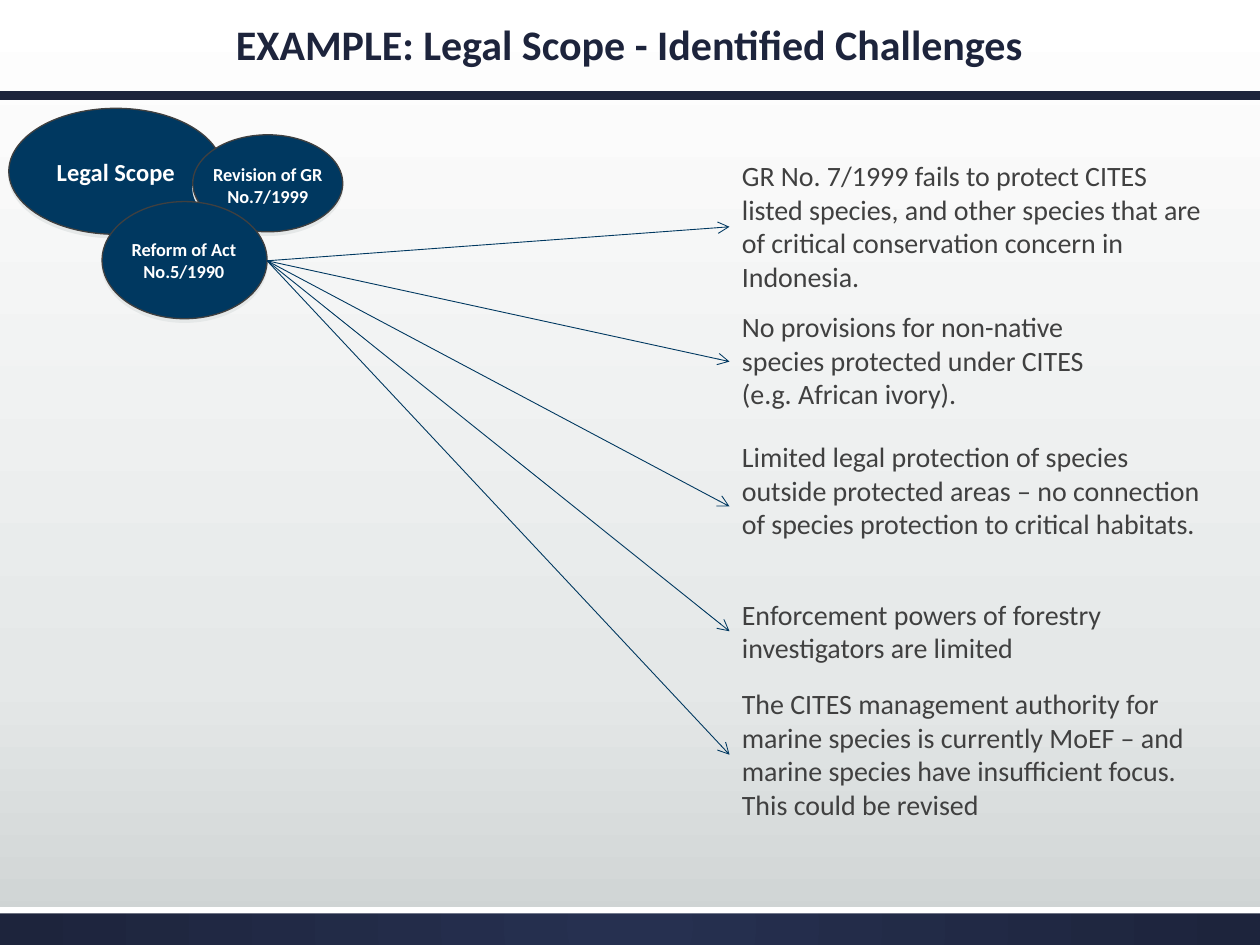
"""Build the slide on identified challenges in the legal scope."""
from lxml import etree
from pptx import Presentation
from pptx.dml.color import RGBColor
from pptx.enum import shapes, text
from pptx.oxml import ns, parse_xml
from pptx.util import Inches, Pt

NAVY, BLUE, GREY, WHITE = "1D243C", "003860", "404040", "FFFFFF"
LEFT, CENTER = text.PP_ALIGN.LEFT, text.PP_ALIGN.CENTER
TOP, MIDDLE, BOTTOM = text.MSO_ANCHOR.TOP, text.MSO_ANCHOR.MIDDLE, text.MSO_ANCHOR.BOTTOM


def color(value):
    return RGBColor.from_string(value)


def add_text(box, content, size, hue, bold=False, align=LEFT, anchor=TOP, inset=None):
    shape = slide.shapes.add_textbox(*map(Inches, box))
    frame = shape.text_frame
    frame.word_wrap = True
    frame.vertical_anchor = anchor
    if inset is not None:
        frame.margin_left = frame.margin_right = Inches(inset)
        frame.margin_top = frame.margin_bottom = Inches(inset)
    paragraph = frame.paragraphs[0]
    paragraph.text = content
    paragraph.alignment = align
    paragraph.font.name = "Calibri"
    paragraph.font.size = Pt(size)
    paragraph.font.bold = bold
    paragraph.font.color.rgb = color(hue)


presentation = Presentation()
presentation.slide_width, presentation.slide_height = Inches(10), Inches(7.5)
slide = presentation.slides.add_slide(presentation.slide_layouts[6])

slide.background.fill.gradient()
footer = slide.shapes.add_shape(
    shapes.MSO_SHAPE.RECTANGLE, Inches(0), Inches(7.2), Inches(10), Inches(0.3))
footer.shadow.inherit = False
footer.line.fill.background()
footer.fill.gradient()

center_path = ('<a:path path="circle"><a:fillToRect l="50000" t="50000" '
               'r="50000" b="50000"/></a:path>')
gradients = [
    ([(0, WHITE), (72, "E5E8E8"), (100, "CDD2D2")], '<a:lin ang="5400000" scaled="0"/>'),
    ([(0, "263050"), (100, NAVY)], center_path),
]
fills = list(slide.element.iter(ns.qn("a:gradFill")))
for fill, (stops, direction) in zip(fills, gradients):
    stop_xml = "".join(
        f'<a:gs pos="{position * 1000}"><a:srgbClr val="{hue}"/></a:gs>'
        for position, hue in stops)
    fill.getparent().replace(fill, parse_xml(
        f'<a:gradFill {ns.nsdecls("a")} rotWithShape="1">'
        f'<a:gsLst>{stop_xml}</a:gsLst>{direction}</a:gradFill>'))

stripe = slide.shapes.add_shape(
    shapes.MSO_SHAPE.RECTANGLE, Inches(0), Inches(7.2), Inches(10), Inches(0.05))
stripe.shadow.inherit = False
stripe.fill.solid()
stripe.fill.fore_color.rgb = color(WHITE)
stripe.line.fill.background()

add_text((0.33, 0.17, 9.33, 0.43), "EXAMPLE: Legal Scope - Identified Challenges",
         24, NAVY, True, CENTER, BOTTOM)

topics = [
    ((0.07, 0.86, 1.7, 1), (0.14, 0.9, 1.56, 0.92), "Legal Scope", 14),
    ((1.53, 1.07, 1.19, 0.77), (1.58, 1.12, 1.09, 0.7), "Revision of GR No.7/1999", 10.5),
    ((0.81, 1.6, 1.31, 0.93), (0.86, 1.64, 1.2, 0.85), "Reform of Act No.5/1990", 10.5),
]
for oval, label_box, label, size in topics:
    ellipse = slide.shapes.add_shape(shapes.MSO_SHAPE.OVAL, *map(Inches, oval))
    ellipse.fill.solid()
    ellipse.fill.fore_color.rgb = color(BLUE)
    ellipse.line.color.rgb = color(GREY)
    ellipse.line.width = Pt(0.75)
    ellipse.element.spPr.append(parse_xml(
        f'<a:effectLst {ns.nsdecls("a")}><a:outerShdw blurRad="0" dist="25400" '
        'dir="5400000" rotWithShape="0"><a:srgbClr val="E5E8E8"/>'
        '</a:outerShdw></a:effectLst>'))
    add_text(label_box, label, size, WHITE, True, CENTER, MIDDLE, 0)

challenges = [
    (1.21, 3.86, 1.18, 1.8, "GR No. 7/1999 fails to protect CITES listed species, and other "
     "species that are of critical conservation concern in Indonesia."),
    (2.41, 3.12, 0.91, 2.87, "No provisions for non-native species protected under CITES "
     "(e.g. African ivory)."),
    (3.44, 3.86, 1.18, 4.02, "Limited legal protection of species outside protected areas – "
     "no connection of species protection to critical habitats."),
    (4.69, 3.86, 0.64, 5.01, "Enforcement powers of forestry investigators are limited"),
    (5.4, 3.86, 1.18, 5.99, "The CITES management authority for marine species is currently "
     "MoEF – and marine species have insufficient focus. This could be revised"),
]
lines = [(0, 0.76, 10, 0.76, NAVY, 5, False)]
for top, width, height, target, challenge in challenges:
    add_text((5.79, top, width, height), challenge, 16, GREY)
    lines.append((2.12, 2.07, 5.79, target, BLUE, 0.5, True))

for *ends, hue, weight, arrow in lines:
    connector = slide.shapes.add_connector(
        shapes.MSO_CONNECTOR.STRAIGHT, *map(Inches, ends))
    connector.line.color.rgb = color(hue)
    connector.line.width = Pt(weight)
    properties = connector.element.spPr
    if arrow:
        outline = properties.find(ns.qn("a:ln"))
        etree.SubElement(outline, ns.qn("a:tailEnd"), type="arrow")
    etree.SubElement(properties, ns.qn("a:effectLst"))

presentation.save("out.pptx")
